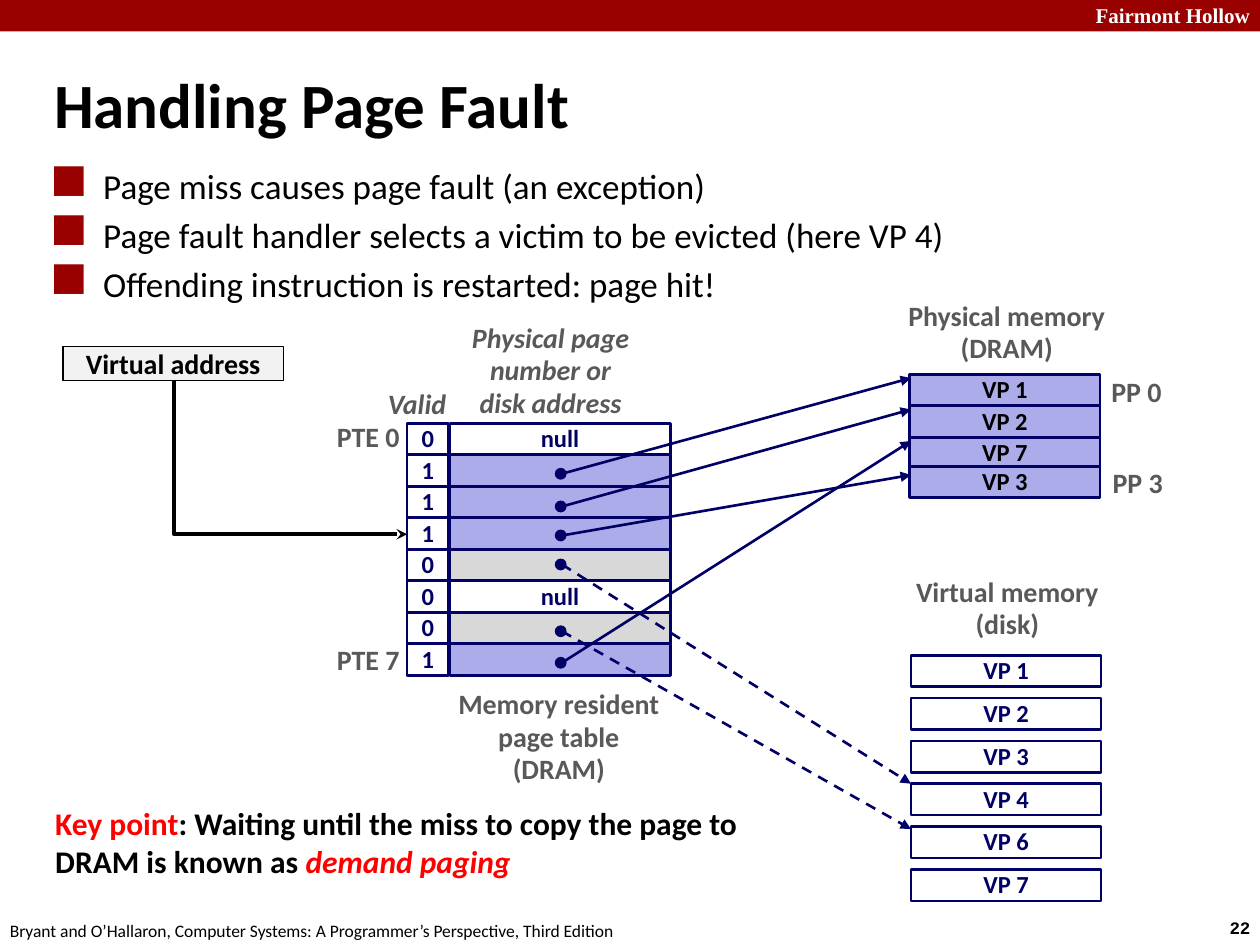
from lxml import etree
from pptx import Presentation
from pptx import util as u
from pptx.dml.color import RGBColor
from pptx.enum import dml, shapes, text
from pptx.oxml.ns import qn

NAVY, LILAC, SILVER, GRAY = "000066", "ACACEA", "D8D8D8", "595959"
BLACK, WHITE, RED, CRIMSON = "000000", "FFFFFF", "FF0000", "990000"
LEFT, CENTER, RIGHT = text.PP_ALIGN.LEFT, text.PP_ALIGN.CENTER, text.PP_ALIGN.RIGHT
TOP, MIDDLE = text.MSO_ANCHOR.TOP, text.MSO_ANCHOR.MIDDLE
RECT, OVAL = shapes.MSO_SHAPE.RECTANGLE, shapes.MSO_SHAPE.OVAL
ROW = 0.25


def rgb(value):
    """Turn a hex string into a colour."""
    return RGBColor.from_string(value)


def style(font, size, color, name="Calibri", bold=True, italic=False):
    """Set the look of a font."""
    font.size, font.name = u.Pt(size), name
    font.bold, font.italic = bold, italic
    font.color.rgb = rgb(color)


def write(sp, lines, size, color, align=LEFT, anchor=TOP, spacing=0.98, wrap=False, **look):
    """Fill a shape with one paragraph per line and return its paragraphs."""
    tf = sp.text_frame
    tf.word_wrap, tf.vertical_anchor = wrap, anchor
    tf.auto_size = text.MSO_AUTO_SIZE.NONE
    tf.text = "\n".join(lines)
    for p in tf.paragraphs:
        p.alignment, p.line_spacing = align, spacing
        style(p.font, size, color, **look)
    return tf.paragraphs


def label(slide, at, lines, size, color, **options):
    """Add a text box and return its paragraphs."""
    sp = slide.shapes.add_textbox(*map(u.Inches, at))
    return write(sp, lines, size, color, **options)


def box(slide, at, fill=None, line=NAVY, width=1.5, kind=RECT):
    """Add a flat shape with an optional fill and outline."""
    sp = slide.shapes.add_shape(kind, *map(u.Inches, at))
    sp.shadow.inherit = False
    if fill:
        sp.fill.solid()
        sp.fill.fore_color.rgb = rgb(fill)
    else:
        sp.fill.background()
    if line:
        sp.line.color.rgb = rgb(line)
        sp.line.width = u.Pt(width)
    else:
        sp.line.fill.background()
    return sp


def cell(slide, at, caption, fill=None, color=NAVY):
    """Add one memory or table cell with a centred caption."""
    sp = box(slide, at, fill)
    if caption:
        write(sp, [caption], 14, color, align=CENTER, anchor=MIDDLE)


def arrow(slide, ends, color=NAVY, width=1.5, head="triangle", dashed=False,
          kind=shapes.MSO_CONNECTOR.STRAIGHT):
    """Add a connector with an arrowhead at its end."""
    sp = slide.shapes.add_connector(kind, *map(u.Inches, ends))
    sp.line.color.rgb = rgb(color)
    sp.line.width = u.Pt(width)
    if dashed:
        sp.line.dash_style = dml.MSO_LINE.DASH
    props = sp._element.spPr
    etree.SubElement(props.find(qn("a:ln")), qn("a:tailEnd"), type=head)
    etree.SubElement(props, qn("a:effectLst"))
    return sp


def corner_arrow(slide, start, end):
    """Add an elbow arrow that runs down and then right."""
    (x1, y1), (x2, y2) = start, end
    across, down = x2 - x1, y2 - y1
    left, top = (x1 + x2 - down) / 2, (y1 + y2 - across) / 2
    sp = arrow(slide, (left, top, left + down, top + across), BLACK, 2, "stealth",
               kind=shapes.MSO_CONNECTOR.ELBOW)
    props = sp._element.spPr
    props.find(qn("a:prstGeom")).set("prst", "bentConnector2")
    frame = props.find(qn("a:xfrm"))
    frame.set("rot", str(270 * 60000))
    frame.set("flipH", "1")


def indent(p, size):
    """Give a paragraph a hanging indent."""
    props = p._p.get_or_add_pPr()
    props.set("marL", str(u.Inches(size)))
    props.set("indent", str(-u.Inches(size)))
    return props


def bullets(slide, at, lines):
    """Add a list with square bullets."""
    paragraphs = label(slide, at, lines, 20, BLACK, spacing=1.0, wrap=True, bold=False)
    for i, p in enumerate(paragraphs):
        p.space_before = u.Pt(4 if i else 0)
        props = indent(p, 0.38)
        tint = etree.Element(qn("a:buClr"))
        etree.SubElement(tint, qn("a:srgbClr"), val=CRIMSON)
        face = etree.Element(qn("a:buFont"), typeface="Wingdings 2", charset="2")
        char = etree.Element(qn("a:buChar"), char="¢")
        place = list(props).index(props.find(qn("a:defRPr")))
        props[place:place] = [tint, face, char]


def frame_slide(slide):
    """Add the top band, footer and page number."""
    box(slide, (0, 0, 10, 0.25), CRIMSON, None)
    label(slide, (8.64, -0.03, 1.38, 0.3), ["Fairmont Hollow"], 12, WHITE,
          align=RIGHT, spacing=1.0, name="Times New Roman")
    label(slide, (9.66, 7.23, 0.45, 0.27), ["22"], 10, BLACK, spacing=1.0, name="Courier New")
    credit = "Bryant and O’Hallaron, Computer Systems: A Programmer’s Perspective, Third Edition"
    label(slide, (-0.02, 7.25, 5.08, 0.27), [credit], 10, BLACK, spacing=1.0, bold=False)


def title(slide, caption):
    """Place and format the title."""
    sp = slide.shapes.title
    sp.left, sp.top, sp.width, sp.height = map(u.Inches, (0.33, 0.39, 9.06, 0.86))
    p = write(sp, [caption], 36, BLACK, anchor=MIDDLE, spacing=1.0, wrap=True)[0]
    indent(p, 0.13)


def page_table(slide):
    """Draw the page table with its valid bits."""
    rows = [("0", "null", WHITE), ("1", "", LILAC), ("1", "", LILAC), ("1", "", LILAC),
            ("0", "", SILVER), ("0", "null", WHITE), ("0", "", SILVER), ("1", "", LILAC)]
    for i, (valid, entry, fill) in enumerate(rows):
        y = 3.36 + i * ROW
        cell(slide, (3.23, y, 0.33, ROW), valid)
        cell(slide, (3.57, y, 1.75, ROW), entry, fill)


def memories(slide):
    """Draw the pages held in DRAM and on disk."""
    for name, y in (("VP 7", 3.47), ("VP 3", 3.7), ("VP 2", 3.22), ("VP 1", 2.97)):
        cell(slide, (7.22, y, 1.51, ROW), name, LILAC, BLACK)
    for i, number in enumerate((1, 2, 3, 4, 6, 7)):
        cell(slide, (7.23, 5.2 + i * 0.34, 1.51, ROW), f"VP {number}", WHITE)


def pointers(slide):
    """Link the page table entries to their pages."""
    links = [(3.76, 3, False), (4.02, 3.25, False), (4.25, 3.77, False),
             (4.48, 6.22, True), (5.01, 6.58, True), (5.26, 3.5, False)]
    for y, target, dashed in links:
        arrow(slide, (4.46, y, 7.23, target), dashed=dashed)
        box(slide, (4.41, y - 0.04, 0.08, 0.08), NAVY, width=1, kind=OVAL)


def captions(slide):
    """Name the parts of the diagram."""
    parts = [
        ((3.51, 5.41, 1.85, 0.89), ["Memory resident", "page table", "(DRAM)"], CENTER, TOP, False),
        ((7.1, 2.33, 1.78, 0.63), ["Physical memory", "(DRAM)"], CENTER, TOP, False),
        ((7.15, 4.52, 1.69, 0.63), ["Virtual memory", "(disk)"], CENTER, TOP, False),
        ((2.98, 3.03, 0.75, 0.37), ["Valid"], LEFT, TOP, True),
        ((3.64, 2.5, 1.46, 0.89), ["Physical page", "number or", "disk address"],
         CENTER, MIDDLE, True),
        ((2.57, 3.29, 0.7, 0.37), ["PTE 0"], RIGHT, MIDDLE, False),
        ((2.57, 5.06, 0.7, 0.37), ["PTE 7"], RIGHT, MIDDLE, False),
        ((8.72, 2.93, 0.6, 0.37), ["PP 0"], CENTER, MIDDLE, False),
        ((8.73, 3.65, 0.6, 0.37), ["PP 3"], CENTER, MIDDLE, False),
    ]
    for at, lines, align, anchor, italic in parts:
        label(slide, at, lines, 16, GRAY, align=align, anchor=anchor, italic=italic)


def key_point(slide):
    """Add the closing remark with its coloured words."""
    p = label(slide, (0.34, 6.33, 6.33, 0.71), [""], 18, BLACK, spacing=1.0, wrap=True)[0]
    for words, color, italic in (
            ("Key point", RED, False),
            (": Waiting until the miss to copy the page to DRAM is known as ", BLACK, False),
            ("demand paging", RED, True)):
        r = p.add_run()
        r.text = words
        style(r.font, 18, color, italic=italic)


def main():
    """Build and save the slide."""
    prs = Presentation()
    prs.slide_width, prs.slide_height = u.Inches(10), u.Inches(7.5)
    slide = prs.slides.add_slide(prs.slide_layouts[5])
    frame_slide(slide)
    title(slide, "Handling Page Fault")
    bullets(slide, (0.34, 1.26, 9.09, 0.83), [
        "Page miss causes page fault (an exception)",
        "Page fault handler selects a victim to be evicted (here VP 4)",
        "Offending instruction is restarted: page hit!"])
    page_table(slide)
    memories(slide)
    pointers(slide)
    captions(slide)
    address = box(slide, (0.5, 2.75, 1.75, 0.27), "F2F2F2", BLACK, 1)
    write(address, ["Virtual address"], 16, BLACK, align=CENTER, anchor=MIDDLE, spacing=1.0)
    corner_arrow(slide, (1.38, 3.02), (3.23, 4.24))
    key_point(slide)
    prs.save("out.pptx")


if __name__ == "__main__":
    main()
